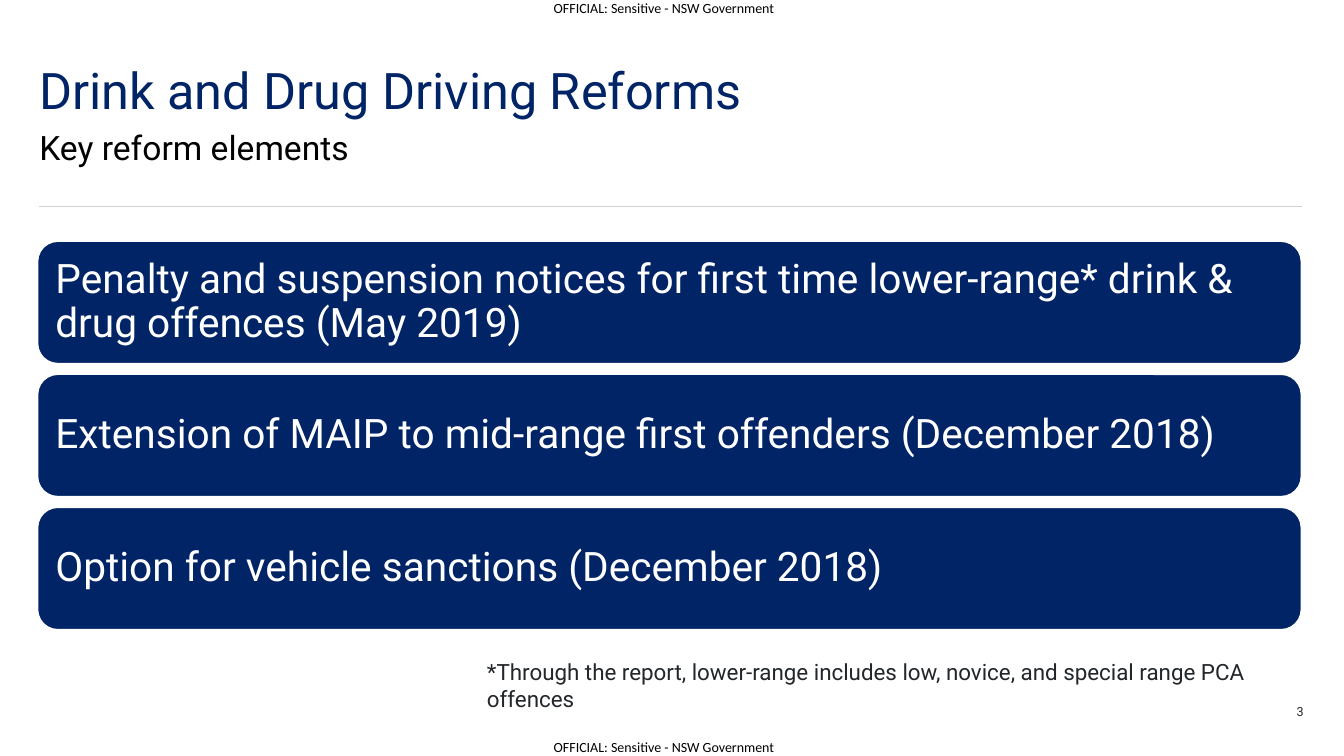
from pptx import Presentation, util as u
from pptx.dml.color import RGBColor
from pptx.enum import shapes, text
from pptx.oxml.ns import qn
from lxml import etree

# Content
MARKING = "OFFICIAL: Sensitive - NSW Government"
TITLE = "Drink and Drug Driving Reforms"
SUBTITLE = "Key reform elements"
REFORMS = [
    "Penalty and suspension notices for first time lower-range* drink & drug offences (May 2019)",
    "Extension of MAIP to mid-range first offenders (December 2018)",
    "Option for vehicle sanctions (December 2018)",
]
FOOTNOTE = "*Through the report, lower-range includes low, novice, and special range PCA offences"
PAGE = "3"

COLOURS = {"navy": "002466", "black": "000000", "ink": "22272B",
           "rule": "CDD3D6", "white": "FFFFFF"}

# Layout, in inches
WIDTH, HEIGHT = 13.33, 7.5
LEFT, RIGHT = 0.39, 12.91
MARKING_W, MARKING_H = 2.23, 0.17
MARKING_LEFT = 5.47
CARD_LEFT, CARD_TOP, CARD_H, CARD_PITCH = 0.37, 2.39, 1.22, 1.32


def colour(name):
    return RGBColor.from_string(COLOURS[name])


def write(frame, words, size, ink, font="Roboto", align="LEFT", anchor="TOP",
          inset=0, after=0, spacing=None):
    frame.word_wrap = True
    frame.vertical_anchor = text.MSO_ANCHOR[anchor]
    frame.margin_left = frame.margin_right = u.Inches(inset)
    frame.margin_top = frame.margin_bottom = u.Inches(inset)
    line = frame.paragraphs[0]
    line.alignment = text.PP_ALIGN[align]
    line.space_after = u.Pt(after)
    if spacing:
        line.line_spacing = spacing
    run = line.add_run()
    run.text = words
    run.font.name, run.font.size = font, u.Pt(size)
    run.font.color.rgb = colour(ink)


def label(left, top, width, height, words, size, ink, **style):
    box = slide.shapes.add_textbox(*map(u.Inches, (left, top, width, height)))
    write(box.text_frame, words, size, ink, **style)


deck = Presentation()
deck.slide_width, deck.slide_height = u.Inches(WIDTH), u.Inches(HEIGHT)
slide = deck.slides.add_slide(deck.slide_layouts[6])

# Security marking at foot and head
for top in (HEIGHT - MARKING_H, 0):
    label(MARKING_LEFT, top, MARKING_W, MARKING_H, MARKING, 10, "black",
          font="Calibri", align="CENTER")

# Heading and rule
label(LEFT, 0.59, 10.12, 0.61, TITLE, 36, "navy")
label(LEFT, 1.26, RIGHT - LEFT, 0.4, SUBTITLE, 24, "black", after=6)
rule = slide.shapes.add_connector(
    shapes.MSO_CONNECTOR.STRAIGHT, *map(u.Inches, (LEFT, 2.05, RIGHT, 2.05)))
rule.line.color.rgb = colour("rule")
rule.line.width = u.Pt(0.75)
etree.SubElement(rule._element.spPr, qn("a:effectLst"))

# Reform cards
for row, reform in enumerate(REFORMS):
    card = slide.shapes.add_shape(
        shapes.MSO_SHAPE.ROUNDED_RECTANGLE,
        *map(u.Inches, (CARD_LEFT, CARD_TOP + row * CARD_PITCH,
                        RIGHT - CARD_LEFT, CARD_H)))
    card.shadow.inherit = False
    card.fill.solid()
    card.fill.fore_color.rgb = colour("navy")
    card.line.color.rgb = colour("white")
    card.line.width = u.Pt(1.5)
    write(card.text_frame, reform, 29, "white", anchor="MIDDLE",
          inset=0.12, spacing=0.9)

# Footnote and page number
label(4.83, 6.53, 7.95, 0.54, FOOTNOTE, 16, "ink", after=16)
label(12.78, 6.98, 0.15, 0.15, PAGE, 9, "ink", align="RIGHT", anchor="MIDDLE", after=6)

deck.save("out.pptx")
